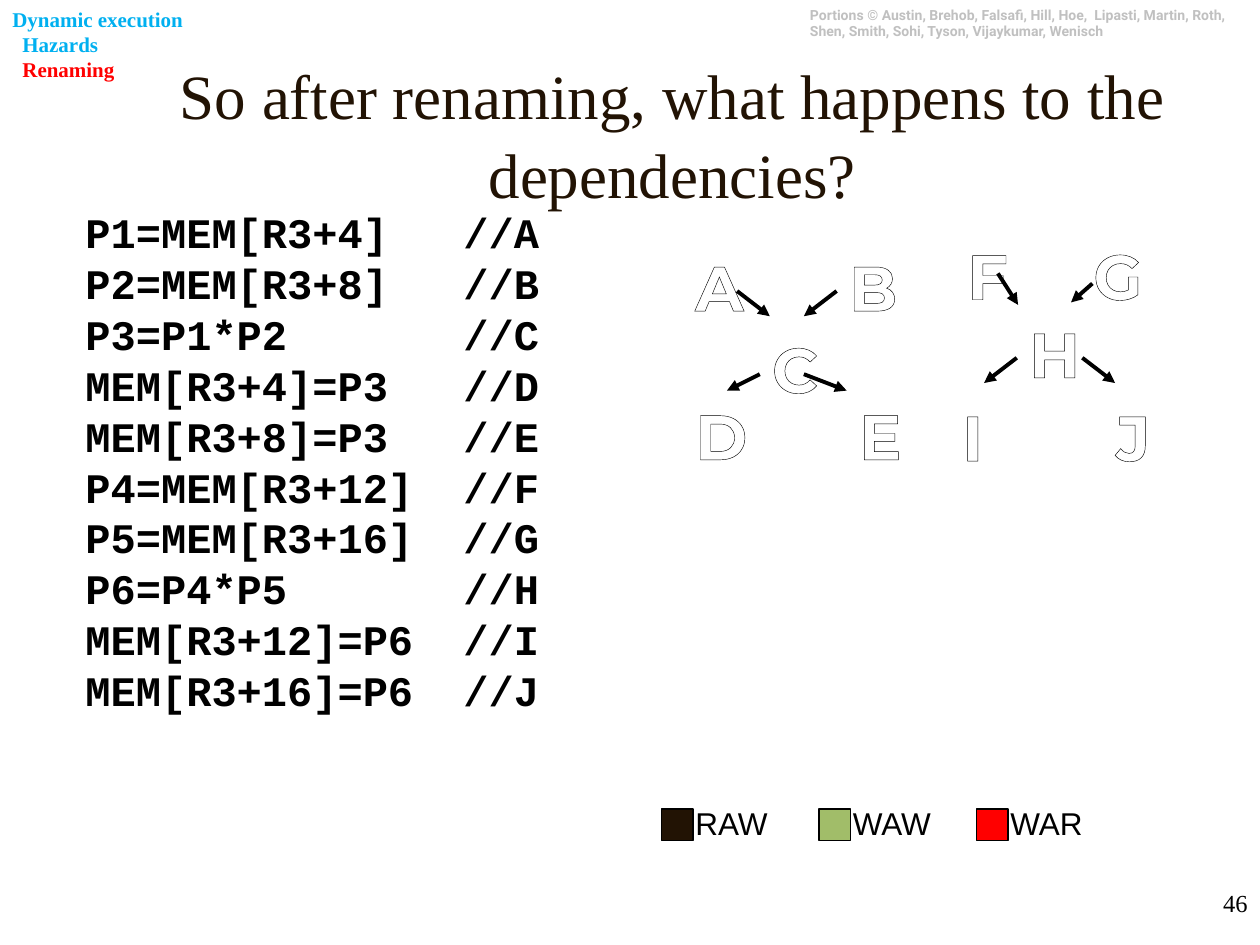
"""Build the slide on dependencies that remain after register renaming."""
from dataclasses import dataclass

from lxml import etree
from pptx import Presentation, util as u
from pptx.dml.color import RGBColor
from pptx.enum import shapes, text
from pptx.oxml.ns import qn


@dataclass(frozen=True)
class Theme:
    """Colours, fonts and type sizes of the slide."""
    ink: str = "000000"
    paper: str = "FFFFFF"
    brown: str = "221304"
    green: str = "A1BD69"
    red: str = "FF0000"
    blue: str = "00B0F0"
    grey: str = "C0C0C0"
    serif: str = "Times New Roman"
    sans: str = "Arial"
    mono: str = "Courier New"
    tiny: int = 8
    small: int = 12
    page: int = 14
    label: int = 18
    code: int = 24
    head: int = 36


T = Theme()
CODE = [
    ("P1=MEM[R3+4]", "A"), ("P2=MEM[R3+8]", "B"), ("P3=P1*P2", "C"),
    ("MEM[R3+4]=P3", "D"), ("MEM[R3+8]=P3", "E"), ("P4=MEM[R3+12]", "F"),
    ("P5=MEM[R3+16]", "G"), ("P6=P4*P5", "H"), ("MEM[R3+12]=P6", "I"),
    ("MEM[R3+16]=P6", "J"),
]
NODES = {
    "A": (5.42, 1.92), "B": (6.64, 1.92), "C": (6.03, 2.57),
    "D": (5.42, 3.1), "E": (6.72, 3.1), "F": (7.58, 1.83),
    "G": (8.58, 1.83), "H": (8.07, 2.45), "I": (7.52, 3.11),
    "J": (8.76, 3.11),
}
EDGES = [
    (5.85, 2.31, 6.11, 2.51), (6.64, 2.31, 6.38, 2.51),
    (6.03, 2.97, 5.77, 3.1), (6.38, 2.97, 6.72, 3.1),
    (7.92, 2.17, 8.08, 2.42), (8.67, 2.25, 8.5, 2.4),
    (8.07, 2.84, 7.81, 3.04), (8.59, 2.84, 8.85, 3.04),
]
KEYS = [("RAW", T.brown), ("WAW", T.green), ("WAR", T.red)]


def apply(item, form):
    """Set each attribute named in a dict of format values."""
    for name, value in form.items():
        setattr(item, name, value)


def add_text(slide, at, lines, face, size, hue, bold=False, frame=None, para=None):
    """Add a text box with one paragraph per line and return its paragraphs."""
    box = slide.shapes.add_textbox(*map(u.Inches, at)).text_frame
    apply(box, {"word_wrap": True, **(frame or {})})
    box.text = "\n".join(lines)
    for item in box.paragraphs:
        apply(item, para or {})
        for run in item.runs:
            apply(run.font, {"name": face, "size": u.Pt(size), "bold": bold})
            run.font.color.rgb = RGBColor.from_string(hue)
    return box.paragraphs


def add_tabs(para, stops):
    """Give a paragraph left tab stops."""
    tabs = etree.SubElement(para._p.get_or_add_pPr(), qn("a:tabLst"))
    for stop in stops:
        etree.SubElement(tabs, qn("a:tab"), pos=str(u.Inches(stop)), algn="l")


def add_node(slide, name, spot):
    """Add an outlined letter of the dependency graph."""
    form = {"alignment": text.PP_ALIGN.CENTER}
    para, = add_text(slide, (*spot, 0.4, 0.39), [name], "Montserrat", T.head,
                     T.paper, True, {"word_wrap": False}, form)
    props = para.runs[0].font._element
    line = etree.Element(qn("a:ln"), w=str(u.Pt(0.75)))
    fill = etree.SubElement(line, qn("a:solidFill"))
    etree.SubElement(fill, qn("a:srgbClr"), val=T.ink)
    props.insert(0, line)


def add_arrow(slide, ends):
    """Add an arrow between two points of the graph."""
    edge = slide.shapes.add_connector(shapes.MSO_CONNECTOR.STRAIGHT,
                                      *map(u.Inches, ends))
    edge.line.color.rgb = RGBColor.from_string(T.ink)
    edge.line.width = u.Pt(2.25)
    etree.SubElement(edge.line._get_or_add_ln(), qn("a:tailEnd"), type="triangle")
    etree.SubElement(edge._element.spPr, qn("a:effectLst"))


def add_swatch(slide, left, hue):
    """Add a coloured square of the key."""
    at = (left, 6.42, 0.25, 0.25)
    box = slide.shapes.add_shape(shapes.MSO_SHAPE.RECTANGLE, *map(u.Inches, at))
    box.shadow.inherit = False
    box.fill.solid()
    box.fill.fore_color.rgb = RGBColor.from_string(hue)
    box.line.color.rgb = RGBColor.from_string(T.ink)
    box.line.width = u.Pt(0.75)


def add_topics(slide):
    """Add the list of topics with the current one in red."""
    names = ["Dynamic execution", "Hazards", "Renaming"]
    paras = add_text(slide, (0, 0, 1.57, 0.71), names, T.serif, T.small, T.blue,
                     True, {"word_wrap": False})
    for para in paras[1:]:
        para._p.get_or_add_pPr().set("marL", str(u.Inches(0.08)))
    paras[-1].runs[0].font.color.rgb = RGBColor.from_string(T.red)


def add_code(slide):
    """Add the renamed code with its labels in a second column."""
    lines = [f"{code}\t//{name}" for code, name in CODE]
    form = {"line_spacing": 0.8, "space_before": u.Pt(6)}
    for para in add_text(slide, (0.58, 1.67, 4.08, 4.17), lines, T.mono, T.code,
                         T.ink, True, para=form):
        add_tabs(para, [3])


def add_key(slide):
    """Add the key of dependency kinds."""
    step = 1.25
    line = "\t".join(name for name, _ in KEYS)
    para, = add_text(slide, (5.42, 6.33, 3.92, 0.4), [line], T.sans, T.label, T.ink)
    add_tabs(para, [step * i for i in range(1, len(KEYS))])
    for i, (_, hue) in enumerate(KEYS):
        add_swatch(slide, 5.25 + step * i, hue)


def main():
    """Build and save the slide."""
    deck = Presentation()
    apply(deck, {"slide_width": u.Inches(10), "slide_height": u.Inches(7.5)})
    slide = deck.slides.add_slide(deck.slide_layouts[6])
    add_text(slide, (6.33, 0, 3.67, 0.37),
             ["Portions © Austin, Brehob, Falsafi, Hill, Hoe,  Lipasti, Martin, "
              "Roth, Shen, Smith, Sohi, Tyson, Vijaykumar, Wenisch"],
             "Roboto", T.tiny, T.grey, True)
    add_text(slide, (7.92, 7, 2.08, 0.5), ["46"], T.serif, T.page, T.ink,
             para={"alignment": text.PP_ALIGN.RIGHT})
    add_text(slide, (1.17, 0.42, 8.33, 1.25),
             ["So after renaming, what happens to the dependencies?"],
             T.serif, T.head, T.brown,
             frame={"vertical_anchor": text.MSO_ANCHOR.MIDDLE},
             para={"alignment": text.PP_ALIGN.CENTER, "line_spacing": 1.05})
    add_code(slide)
    for name, spot in NODES.items():
        add_node(slide, name, spot)
    for ends in EDGES:
        add_arrow(slide, ends)
    add_key(slide)
    add_topics(slide)
    deck.save("out.pptx")


if __name__ == "__main__":
    main()
